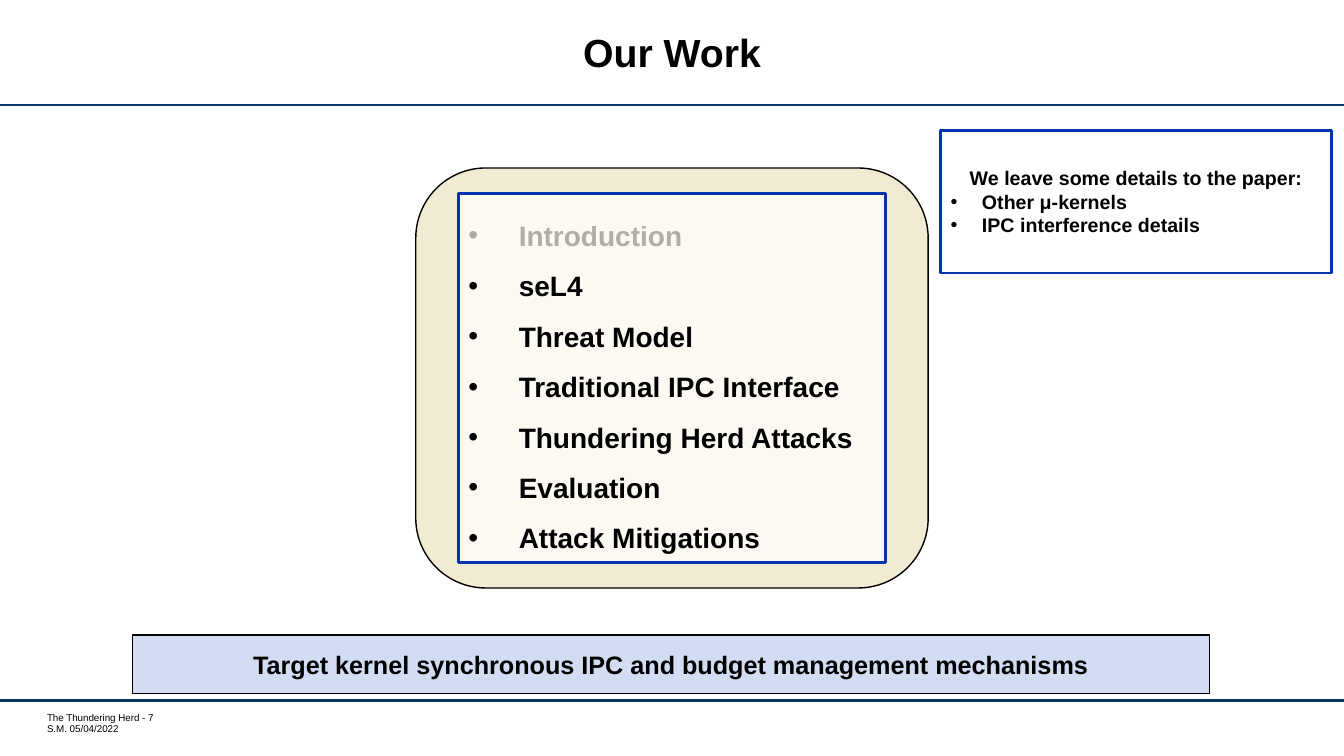
import dataclasses

import lxml.etree
import pptx
import pptx.dml.color
import pptx.enum.shapes
import pptx.enum.text
import pptx.oxml.ns
import pptx.util

SHAPE = pptx.enum.shapes.MSO_SHAPE
ALIGN = pptx.enum.text.PP_ALIGN
ANCHOR = pptx.enum.text.MSO_ANCHOR
COLS, ROWS = 160, 90
CELL = pptx.util.Inches(1 / 12)


@dataclasses.dataclass(frozen=True)
class Theme:
    """Colours and type sizes of the slide."""
    font: str = "Arial"
    ink: str = "000000"
    white: str = "FFFFFF"
    rule: str = "003767"
    frame: str = "0234AD"
    sand: str = "F2EBD3"
    sky: str = "D2DCF2"
    title: int = 28
    agenda: int = 20
    message: int = 18
    note: int = 14
    footer: int = 7


THEME = Theme()


def rgb(value):
    """Turn a hex string into a colour."""
    return pptx.dml.color.RGBColor.from_string(value)


def emu(box):
    """Turn a box in grid cells into slide lengths."""
    return [round(n * CELL) for n in box]


def sub(parent, tag, **attrs):
    """Add a DrawingML child element."""
    return lxml.etree.SubElement(parent, pptx.oxml.ns.qn(tag), attrs)


def set_alpha(node, percent):
    """Make the solid fill directly under a node translucent."""
    for color in node.xpath("./a:solidFill/a:srgbClr"):
        sub(color, "a:alpha", val=str(percent * 1000))


def add_text(p, text, size, bold=True, alpha=None):
    """Write one formatted run into a paragraph."""
    r = p.add_run()
    r.text = text
    values = {"name": THEME.font, "size": pptx.util.Pt(size), "bold": bold}
    for name, value in values.items():
        setattr(r.font, name, value)
    r.font.color.rgb = rgb(THEME.ink)
    if alpha:
        set_alpha(r.font._element, alpha)


def add_bullet(p, indent):
    """Give a paragraph a left-aligned hanging bullet."""
    p.alignment = ALIGN.LEFT
    pPr = p._p.get_or_add_pPr()
    width = pptx.util.Inches(indent)
    pPr.set("marL", str(width))
    pPr.set("indent", str(-width))
    sub(pPr, "a:buFont", typeface=THEME.font)
    sub(pPr, "a:buChar", char="•")


def add_paragraphs(tf, count):
    """Return the given number of paragraphs of an empty frame."""
    return [tf.paragraphs[0]] + [tf.add_paragraph() for _ in range(count - 1)]


def add_box(s, box, fill, line, width, kind=SHAPE.RECTANGLE, alpha=None):
    """Draw an outlined shape and return its text frame."""
    sp = s.shapes.add_shape(kind, *emu(box))
    sp.shadow.inherit = False
    sp.fill.solid()
    sp.fill.fore_color.rgb = rgb(fill)
    sp.line.color.rgb = rgb(line)
    sp.line.width = pptx.util.Pt(width)
    if alpha:
        set_alpha(sp._element.spPr, alpha)
    sp.text_frame.word_wrap = True
    sp.text_frame.vertical_anchor = ANCHOR.MIDDLE
    return sp.text_frame


def add_rule(s, row):
    """Draw a line across the whole slide."""
    x, y, width, _ = emu((0, row, COLS, 0))
    line = s.shapes.add_connector(
        pptx.enum.shapes.MSO_CONNECTOR.STRAIGHT, x, y, x + width, y)
    line.line.color.rgb = rgb(THEME.rule)
    line.line.width = pptx.util.Pt(1.75)
    sub(line._element.spPr, "a:effectLst")


def add_title(s, box, text):
    """Place and format the title placeholder."""
    sp = s.shapes.title
    for name, value in zip(("left", "top", "width", "height"), emu(box)):
        setattr(sp, name, value)
    tf = sp.text_frame
    tf.auto_size = pptx.enum.text.MSO_AUTO_SIZE.NONE
    tf.vertical_anchor = ANCHOR.MIDDLE
    p = tf.paragraphs[0]
    p.alignment = ALIGN.CENTER
    p.line_spacing = pptx.util.Pt(THEME.title)
    add_text(p, text, THEME.title)


def add_footer(s, box, lines):
    """Write the small lines at the foot of the slide."""
    tf = s.shapes.add_textbox(*emu(box)).text_frame
    tf.word_wrap = True
    for side in ("left", "top", "right", "bottom"):
        setattr(tf, f"margin_{side}", 0)
    for p, text in zip(add_paragraphs(tf, len(lines)), lines):
        add_text(p, text, THEME.footer, bold=False)


def add_note(s, box, heading, items):
    """Draw the framed side note with a heading and bullets."""
    tf = add_box(s, box, THEME.white, THEME.frame, 2)
    head, *rest = add_paragraphs(tf, len(items) + 1)
    head.alignment = ALIGN.CENTER
    add_text(head, heading, THEME.note)
    for p, text in zip(rest, items):
        add_bullet(p, 0.31)
        add_text(p, text, THEME.note)


def add_agenda(s, box, items, done):
    """Draw the agenda panel, fading the items already done."""
    add_box(s, box, THEME.sand, THEME.ink, 1, SHAPE.ROUNDED_RECTANGLE)
    x, y, w, h = box
    dx, dy = w / 12, h * 0.06
    inner = (x + dx, y + dy, w - 2 * dx, h - 2 * dy)
    tf = add_box(s, inner, THEME.white, THEME.frame, 2, alpha=70)
    for p, text in zip(add_paragraphs(tf, len(items)), items):
        p.line_spacing = 1.5
        add_bullet(p, 0.5)
        add_text(p, text, THEME.agenda, alpha=30 if text in done else None)


def add_message(s, box, text):
    """Draw the key message bar."""
    p = add_box(s, box, THEME.sky, THEME.ink, 1).paragraphs[0]
    p.alignment = ALIGN.CENTER
    add_text(p, text, THEME.message)


def main():
    """Build and save the slide."""
    prs = pptx.Presentation()
    prs.slide_width, prs.slide_height = COLS * CELL, ROWS * CELL
    s = prs.slides.add_slide(prs.slide_layouts.get_by_name("Title Only"))
    add_rule(s, 12.5)
    add_footer(s, (5.6, 84.7, 24.4, 2.9),
               ("The Thundering Herd - 7", "S.M. 05/04/2022"))
    add_rule(s, 83.4)
    add_title(s, (16.5, 1.3, 127, 10.7), "Our Work")
    add_note(s, (112, 15.5, 46.5, 17), "We leave some details to the paper:",
             ("Other μ-kernels", "IPC interference details"))
    add_agenda(s, (49.5, 20, 61, 50),
               ("Introduction", "seL4", "Threat Model",
                "Traditional IPC Interface", "Thundering Herd Attacks",
                "Evaluation", "Attack Mitigations"), {"Introduction"})
    add_message(s, (15.75, 75.6, 128.25, 7),
                "Target kernel synchronous IPC and budget management mechanisms")
    prs.save("out.pptx")


if __name__ == "__main__":
    main()
